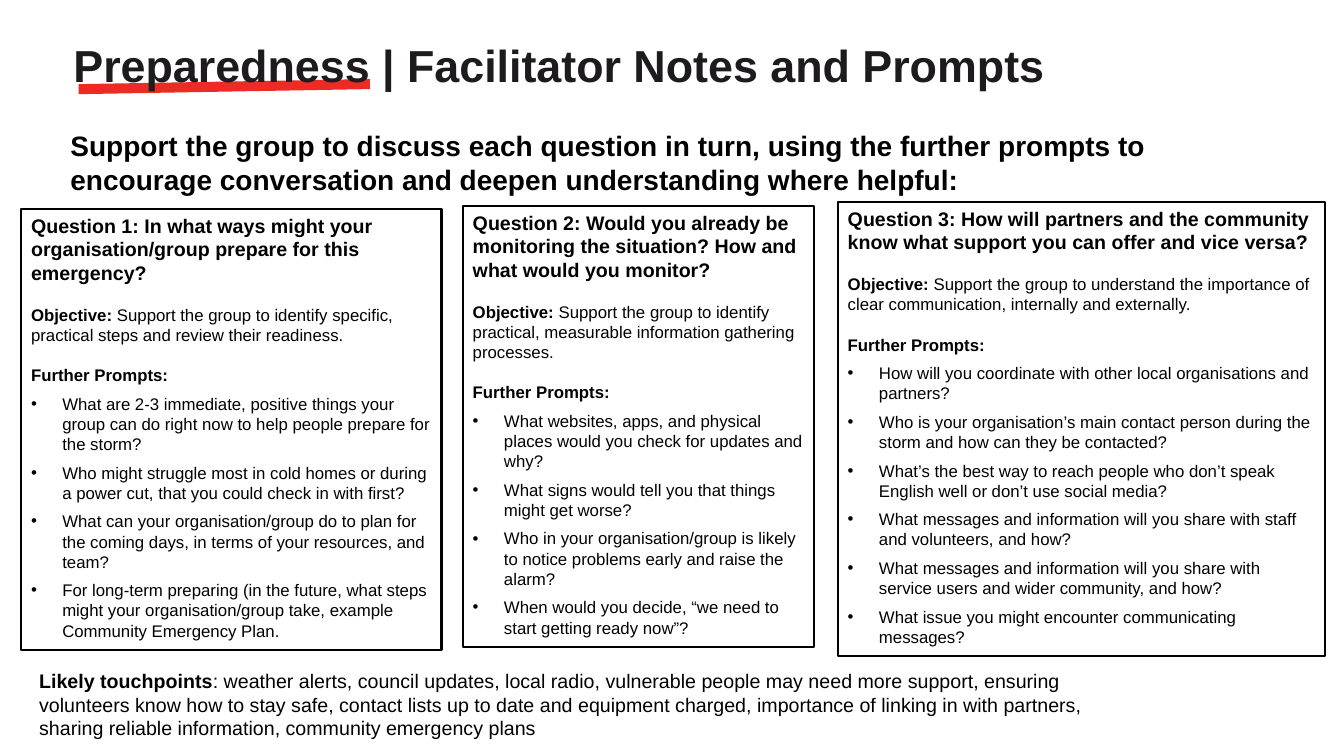
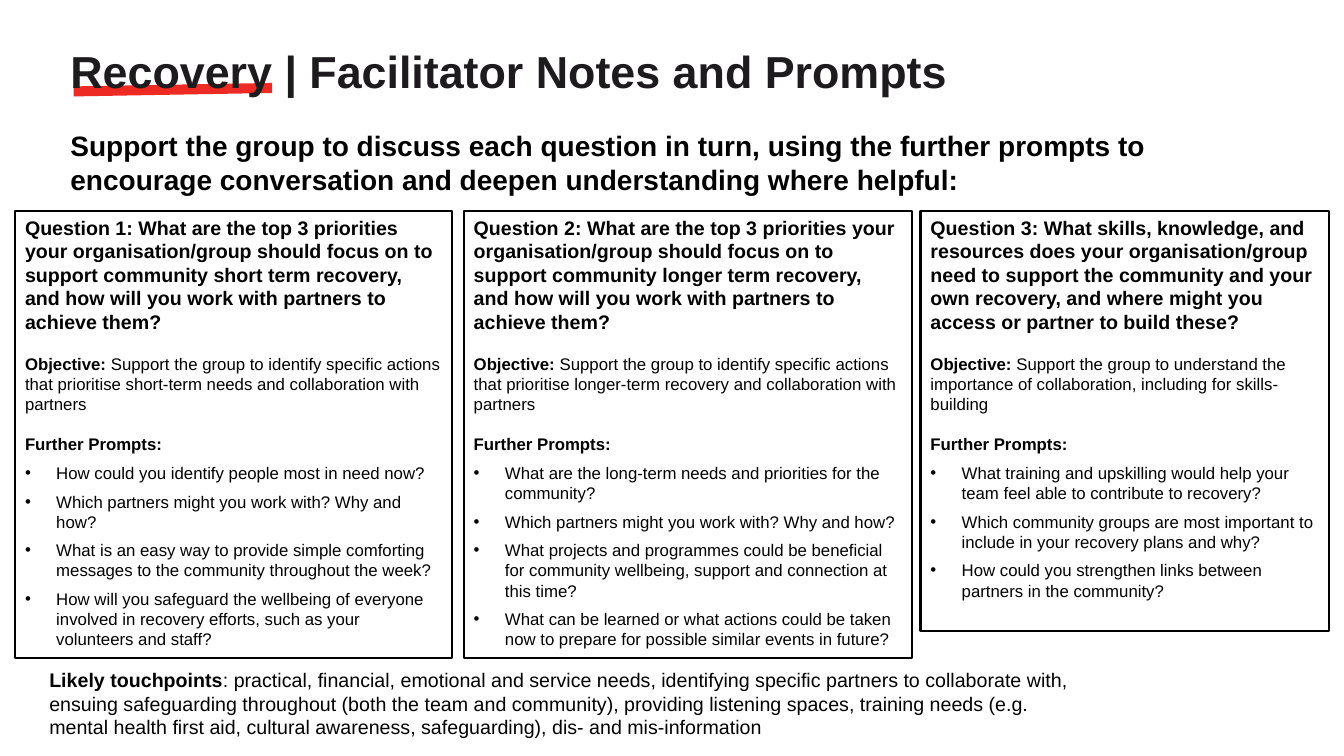
import pptx
import pptx.dml.color
import pptx.enum.shapes
import pptx.enum.text
import pptx.oxml
import pptx.oxml.ns
import pptx.util

Inches = pptx.util.Inches
Pt = pptx.util.Pt

COLOURS = {"text": "000000", "title": "1D1B1D", "accent": "EE2A24", "page": "FFFFFF"}
FONT = "Arial"
SIZES = {"title": 32, "lead": 20, "heading": 14, "body": 12}
BULLET_INDENT = 0.31
PROMPT_GAP = 6
SECTION_GAP = 14.4
LEAD = (
    "Support the group to discuss each question in turn, using the further prompts "
    "to encourage conversation and deepen understanding where helpful:"
)

SLIDES = [
    {
        "title": "Preparedness",
        "title_at": (0.63, 0.33, 12.12, 0.64),
        "underline_at": (0.78, 0.81, 2.89, 0.1),
        "questions": [
            {
                "at": (0.21, 2.07, 4.17, 4.38),
                "question": "In what ways might your organisation/group prepare for this emergency?",
                "objective": "Support the group to identify specific, practical steps and review "
                             "their readiness.",
                "prompts": [
                    "What are 2-3 immediate, positive things your group can do right now to help "
                    "people prepare for the storm?",
                    "Who might struggle most in cold homes or during a power cut, that you could "
                    "check in with first?",
                    "What can your organisation/group do to plan for the coming days, in terms of "
                    "your resources, and team?",
                    "For long-term preparing (in the future, what steps might your "
                    "organisation/group take, example Community Emergency Plan.",
                ],
            },
            {
                "at": (4.59, 2.04, 3.48, 4.38),
                "question": "Would you already be monitoring the situation? How and what would "
                            "you monitor?",
                "objective": "Support the group to identify practical, measurable information "
                             "gathering processes.",
                "prompts": [
                    "What websites, apps, and physical places would you check for updates and why?",
                    "What signs would tell you that things might get worse?",
                    "Who in your organisation/group is likely to notice problems early and raise "
                    "the alarm?",
                    "When would you decide, “we need to start getting ready now”?",
                ],
            },
            {
                "at": (8.31, 2, 4.83, 4.51),
                "question": "How will partners and the community know what support you can offer "
                            "and vice versa?",
                "objective": "Support the group to understand the importance of clear "
                             "communication, internally and externally.",
                "prompts": [
                    "How will you coordinate with other local organisations and partners?",
                    "Who is your organisation’s main contact person during the storm and how can "
                    "they be contacted?",
                    "What’s the best way to reach people who don’t speak English well or don’t "
                    "use social media?",
                    "What messages and information will you share with staff and volunteers, "
                    "and how?",
                    "What messages and information will you share with service users and wider "
                    "community, and how?",
                    "What issue you might encounter communicating messages?",
                ],
            },
        ],
        "touchpoints_at": (0.29, 6.59, 10.64, 0.81),
        "touchpoints": "weather alerts, council updates, local radio, vulnerable people may need "
                       "more support, ensuring volunteers know how to stay safe, contact lists up "
                       "to date and equipment charged, importance of linking in with partners, "
                       "sharing reliable information, community emergency plans",
    },
    {
        "title": "Recovery",
        "title_at": (0.6, 0.38, 12.73, 0.64),
        "underline_at": (0.73, 0.84, 1.97, 0.1),
        "questions": [
            {
                "at": (0.15, 2.09, 4.33, 4.44),
                "question": "What are the top 3 priorities your organisation/group should focus "
                            "on to support community short term recovery, and how will you work "
                            "with partners to achieve them?",
                "objective": "Support the group to identify specific actions that prioritise "
                             "short-term needs and collaboration with partners",
                "prompts": [
                    "How could you identify people most in need now?",
                    "Which partners might you work with? Why and how?",
                    "What is an easy way to provide simple comforting messages to the community "
                    "throughout the week?",
                    "How will you safeguard the wellbeing of everyone involved in recovery "
                    "efforts, such as your volunteers and staff?",
                ],
            },
            {
                "at": (4.6, 2.09, 4.45, 4.44),
                "question": "What are the top 3 priorities your organisation/group should focus "
                            "on to support community longer term recovery, and how will you work "
                            "with partners to achieve them?",
                "objective": "Support the group to identify specific actions that prioritise "
                             "longer-term recovery and collaboration with partners",
                "prompts": [
                    "What are the long-term needs and priorities for the community?",
                    "Which partners might you work with? Why and how?",
                    "What projects and programmes could be beneficial for community wellbeing, "
                    "support and connection at this time?",
                    "What can be learned or what actions could be taken now to prepare for "
                    "possible similar events in future?",
                ],
            },
            {
                "at": (9.13, 2.09, 4.05, 4.17),
                "question": "What skills, knowledge, and resources does your organisation/group "
                            "need to support the community and your own recovery, and where might "
                            "you access or partner to build these?",
                "objective": "Support the group to understand the importance of collaboration, "
                             "including for skills-building",
                "prompts": [
                    "What training and upskilling would help your team feel able to contribute "
                    "to recovery?",
                    "Which community groups are most important to include in your recovery plans "
                    "and why?",
                    "How could you strengthen links between partners in the community?",
                ],
            },
        ],
        "touchpoints_at": (0.39, 6.58, 10.55, 0.81),
        "touchpoints": "practical, financial, emotional and service needs, identifying specific "
                       "partners to collaborate with, ensuing safeguarding throughout (both the "
                       "team and community), providing listening spaces, training needs (e.g. "
                       "mental health first aid, cultural awareness, safeguarding), dis- and "
                       "mis-information",
    },
]


def colour(name):
    return pptx.dml.color.RGBColor.from_string(COLOURS[name])


class Deck:
    """Holds the presentation, its style and the slide being filled."""

    def __init__(self):
        self.presentation = pptx.Presentation()
        self.presentation.slide_width = Inches(13.33)
        self.presentation.slide_height = Inches(7.5)
        self.slide = None

    def new_slide(self):
        self.slide = self.presentation.slides.add_slide(self.presentation.slide_layouts[6])
        fill = self.slide.background.fill
        fill.solid()
        fill.fore_color.rgb = colour("page")

    def rectangle(self, at):
        shape = self.slide.shapes.add_shape(
            pptx.enum.shapes.MSO_SHAPE.RECTANGLE, *map(Inches, at))
        shape.shadow.inherit = False
        return shape

    def paragraph(self, frame, runs, size, colour_name="text", before=0, after=0, bullet=False):
        """Fill the next paragraph with (text, bold) runs."""
        first = frame.paragraphs[0]
        paragraph = frame.add_paragraph() if first.runs else first
        paragraph.alignment = pptx.enum.text.PP_ALIGN.LEFT
        paragraph.space_before = Pt(before)
        paragraph.space_after = Pt(after)
        if bullet:
            properties = paragraph._p.get_or_add_pPr()
            properties.set("marL", str(Inches(BULLET_INDENT)))
            properties.set("indent", str(-Inches(BULLET_INDENT)))
            for tag, name, value in (("buFont", "typeface", FONT), ("buChar", "char", "•")):
                element = pptx.oxml.parse_xml(
                    f'<a:{tag} {pptx.oxml.ns.nsdecls("a")} {name}="{value}"/>')
                properties.append(element)
        for text, bold in runs:
            run = paragraph.add_run()
            run.text = text
            run.font.name = FONT
            run.font.size = Pt(SIZES[size])
            run.font.bold = bold
            run.font.color.rgb = colour(colour_name)

    def text(self, at, runs, size, colour_name="text"):
        frame = self.slide.shapes.add_textbox(*map(Inches, at)).text_frame
        frame.word_wrap = True
        self.paragraph(frame, runs, size, colour_name)

    def underline(self, at):
        shape = self.rectangle(at)
        shape.fill.solid()
        shape.fill.fore_color.rgb = colour("accent")
        shape.line.fill.background()
        shape.rotation = -1

    def question_box(self, number, at, question, objective, prompts):
        shape = self.rectangle(at)
        shape.fill.background()
        shape.line.color.rgb = colour("text")
        shape.line.width = Pt(1.5)
        frame = shape.text_frame
        frame.word_wrap = True
        frame.vertical_anchor = pptx.enum.text.MSO_ANCHOR.TOP
        self.paragraph(frame, [(f"Question {number}: {question}", True)], "heading")
        self.paragraph(frame, [("Objective:", True), (f" {objective}", False)], "body",
                       before=SECTION_GAP)
        self.paragraph(frame, [("Further Prompts:", True)], "body",
                       before=SECTION_GAP, after=PROMPT_GAP)
        for prompt in prompts:
            self.paragraph(frame, [(prompt, False)], "body", after=PROMPT_GAP, bullet=True)


def main():
    deck = Deck()
    for content in SLIDES:
        deck.new_slide()
        deck.text((0.6, 1.23, 11.1, 0.77), [(LEAD, True)], "lead")
        for number, question in enumerate(content["questions"], start=1):
            deck.question_box(number, **question)
        deck.text(content["touchpoints_at"],
                  [("Likely touchpoints", True), (f": {content['touchpoints']}", False)],
                  "heading")
        deck.underline(content["underline_at"])
        deck.text(content["title_at"],
                  [(f"{content['title']} | Facilitator Notes and Prompts", True)],
                  "title", "title")
    deck.presentation.save("out.pptx")


if __name__ == "__main__":
    main()
